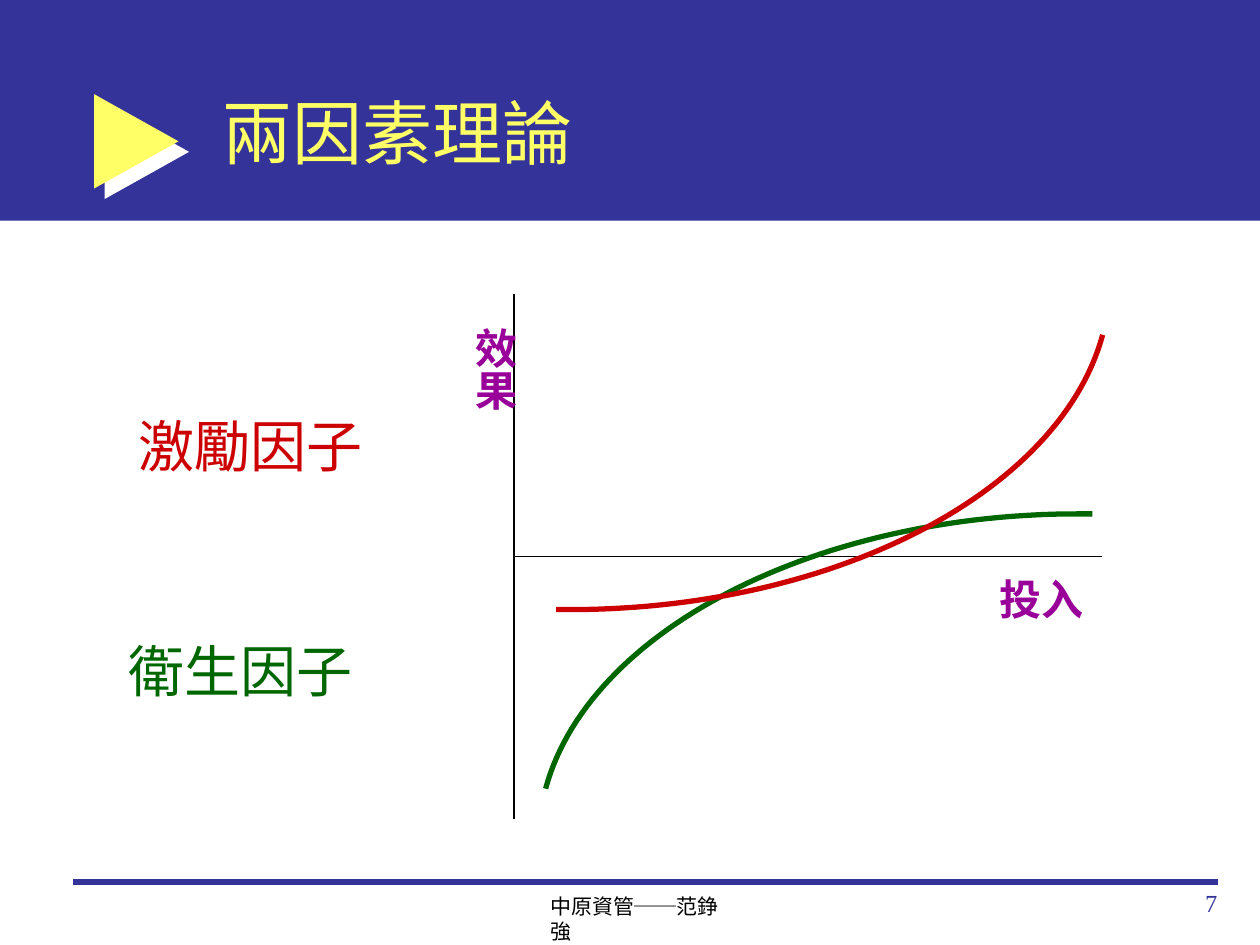
"""Build the two-factor theory slide."""
from dataclasses import dataclass

from lxml import etree
from pptx import Presentation
from pptx import util as u
from pptx.dml.color import RGBColor
from pptx.enum import shapes, text
from pptx.oxml.ns import qn


@dataclass(frozen=True)
class Theme:
    navy: str = "333399"
    yellow: str = "FFFF66"
    white: str = "FFFFFF"
    black: str = "000000"
    purple: str = "990099"
    green: str = "006600"
    red: str = "CC0000"
    serif: str = "Times New Roman"
    sans: str = "Arial"
    title: int = 40
    factor: int = 32
    axis: int = 24
    number: int = 14
    footer: int = 12


T = Theme()

BAND = (0, 0, 25.4, 4.45)
MARKER = (1.9, 1.9, 1.7, 1.9)

LINES = [
    ((1.48, 17.78), (24.55, 17.78), T.navy, 3),
    ((10.37, 5.93), (10.37, 16.51), T.black, 1),
    ((10.37, 11.22), (22.22, 11.22), T.black, 1),
]

TEXTS = [
    dict(words="兩因素理論", box=(4.24, 1.07, 19.26, 3.18), size=T.title, color=T.yellow,
         font=T.sans, anchor=text.MSO_ANCHOR.MIDDLE),
    dict(words="效果", box=(9.1, 6.35, 1.52, 1.96), size=T.axis, color=T.purple,
         bold=True, wrap=False, vert="eaVert"),
    dict(words="投入", box=(19.9, 11.43, 2.21, 1.27), size=T.axis, color=T.purple,
         bold=True, wrap=False),
    dict(words="衛生因子", box=(2.34, 12.7, 5.44, 1.6), size=T.factor, color=T.green),
    dict(words="激勵因子", box=(2.54, 8.18, 5.03, 1.6), size=T.factor, color=T.red, wrap=False),
    dict(words="中原資管──范錚強", box=(10.85, 17.88, 4.11, 0.76), size=T.footer, color=T.black),
    dict(words="7", box=(19.51, 17.78, 5.28, 1.27), size=T.number, color=T.navy,
         align=text.PP_ALIGN.RIGHT),
]

HYGIENE = [(11, 15.9), (11.86, 12.73), (16.41, 10.36), (21.74, 10.36)]
HYGIENE_END = (22.02, 10.36)
MIRROR_SUM = (33.23, 22.65)
STEPS = 60


def cm(values):
    return [u.Cm(v) for v in values]


def rgb(color):
    return RGBColor.from_string(color)


def add_fill(s, kind, box, color):
    sp = s.shapes.add_shape(kind, *cm(box))
    sp.shadow.inherit = False
    sp.fill.solid()
    sp.fill.fore_color.rgb = rgb(color)
    sp.line.fill.background()
    return sp


def add_marker(s):
    sp = add_fill(s, shapes.MSO_SHAPE.RIGHT_ARROW, MARKER, T.yellow)
    sp.adjustments[0], sp.adjustments[1] = 0.38, 1
    effects = sp._element.spPr.find(qn("a:effectLst"))
    shadow = etree.SubElement(effects, qn("a:outerShdw"), dist=str(u.Pt(8.5)),
                              dir="2700000", algn="ctr", rotWithShape="0")
    etree.SubElement(shadow, qn("a:srgbClr"), val=T.white)


def add_line(s, start, end, color, width):
    line = s.shapes.add_connector(shapes.MSO_CONNECTOR.STRAIGHT, *cm(start + end))
    line.line.color.rgb = rgb(color)
    line.line.width = u.Pt(width)
    etree.SubElement(line._element.spPr, qn("a:effectLst"))


def add_text(s, words, box, size, color, font=T.serif, bold=False, wrap=True,
             vert=None, align=text.PP_ALIGN.LEFT, anchor=text.MSO_ANCHOR.TOP):
    tf = s.shapes.add_textbox(*cm(box)).text_frame
    tf.word_wrap = wrap
    tf.vertical_anchor = anchor
    if vert:
        tf._txBody.bodyPr.set("vert", vert)
    p = tf.paragraphs[0]
    p.alignment = align
    r = p.add_run()
    r.text = words
    r.font.name, r.font.size, r.font.bold = font, u.Pt(size), bold
    r.font.color.rgb = rgb(color)


def bezier(controls, t):
    weights = ((1 - t) ** 3, 3 * t * (1 - t) ** 2, 3 * t * t * (1 - t), t ** 3)
    return tuple(sum(w * c for w, c in zip(weights, axis)) for axis in zip(*controls))


def mirrored(point):
    return tuple(total - v for total, v in zip(MIRROR_SUM, point))


def add_curve(s, points, color):
    start, *rest = [cm(point) for point in points]
    builder = s.shapes.build_freeform(*start)
    builder.add_line_segments(rest, close=False)
    sp = builder.convert_to_shape()
    sp.shadow.inherit = False
    sp.fill.background()
    sp.line.color.rgb = rgb(color)
    sp.line.width = u.Pt(3)


def main():
    prs = Presentation()
    prs.slide_width, prs.slide_height = cm((25.4, 19.05))
    s = prs.slides.add_slide(prs.slide_layouts[6])
    add_fill(s, shapes.MSO_SHAPE.RECTANGLE, BAND, T.navy)
    add_marker(s)
    for line in LINES:
        add_line(s, *line)
    hygiene = [bezier(HYGIENE, i / STEPS) for i in range(STEPS + 1)] + [HYGIENE_END]
    add_curve(s, hygiene, T.green)
    add_curve(s, [mirrored(point) for point in hygiene], T.red)
    for item in TEXTS:
        add_text(s, **item)
    prs.save("out.pptx")


if __name__ == "__main__":
    main()
